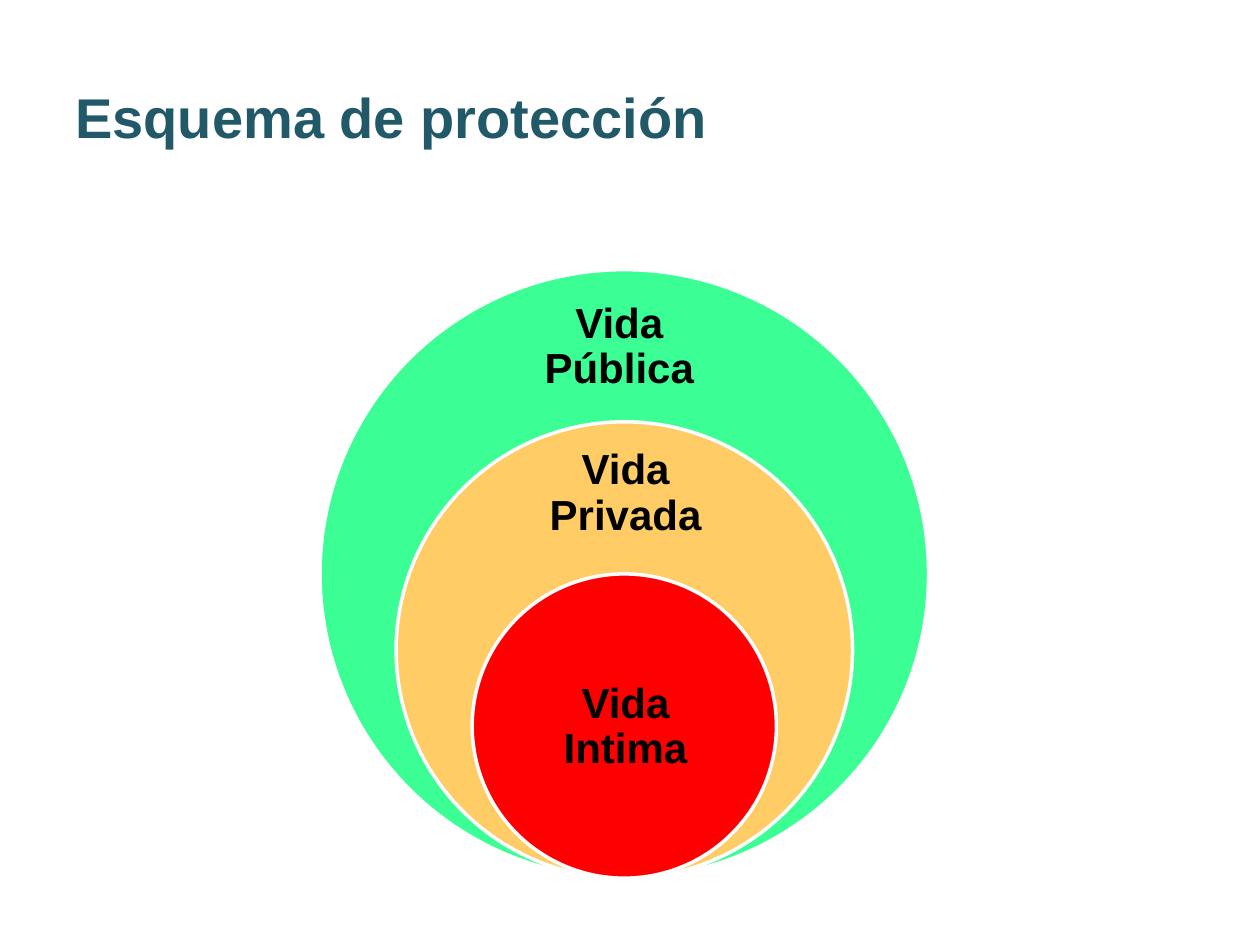
from dataclasses import dataclass

from pptx import Presentation
from pptx.dml.color import RGBColor as Rgb
from pptx.enum.shapes import MSO_SHAPE as Shape
from pptx.enum.text import MSO_ANCHOR as Anchor, PP_ALIGN as Align
from pptx.util import Inches, Pt


@dataclass(frozen=True)
class Theme:
    font: str = "Arial"
    title: str = "215968"
    ink: str = "000000"
    edge: str = "FFFFFF"
    public: str = "3BFF94"
    private: str = "FFCC66"
    inner: str = "FF0000"
    head: int = 32
    body: int = 24


THEME = Theme()

# label, fill, diameter share, label box (left, top, width, height) in the diagram
RINGS = [
    ("Vida Pública", THEME.public, 1, (1.53, 0.25, 1.69, 0.73)),
    ("Vida Privada", THEME.private, 0.75, (1.58, 1.44, 1.69, 0.68)),
    ("Vida Intima", THEME.inner, 0.5, (1.57, 3.03, 1.71, 1.21)),
]


def add_text(slide, box, text, size, color, inset):
    """Add a bold, vertically centred text box and return its paragraph."""
    frame = slide.shapes.add_textbox(*map(Inches, box)).text_frame
    frame.word_wrap = True
    frame.vertical_anchor = Anchor.MIDDLE
    frame.margin_left = frame.margin_right = Inches(inset)
    frame.margin_top = frame.margin_bottom = Inches(inset)
    frame.text = text
    para = frame.paragraphs[0]
    font = para.runs[0].font
    font.name, font.size, font.bold = THEME.font, Pt(size), True
    font.color.rgb = Rgb.from_string(color)
    return para


def add_title(slide, box):
    add_text(slide, box, "Esquema de protección", THEME.head, THEME.title, 0.1)


def add_circle(slide, box, fill):
    circle = slide.shapes.add_shape(Shape.OVAL, *map(Inches, box))
    circle.shadow.inherit = False
    circle.fill.solid()
    circle.fill.fore_color.rgb = Rgb.from_string(fill)
    circle.line.color.rgb = Rgb.from_string(THEME.edge)
    circle.line.width = Pt(2)


def add_rings(slide, box):
    """Nest the circles so that all of them touch the bottom of the box."""
    left, top, width, height = box
    for label, fill, share, (x, y, w, h) in RINGS:
        size = width * share
        add_circle(slide, (left + (width - size) / 2, top + height - size,
                           size, size), fill)
        para = add_text(slide, (left + x, top + y, w, h), label,
                        THEME.body, THEME.ink, 0.19)
        para.alignment = Align.CENTER
        para.line_spacing = 0.9
        para.space_after = Pt(8.4)


def main():
    deck = Presentation()
    deck.slide_width, deck.slide_height = Inches(10), Inches(7.5)
    slide = deck.slides.add_slide(deck.slide_layouts[6])
    add_title(slide, (0.5, 0.3, 9, 1.25))
    add_rings(slide, (2.54, 2.14, 4.83, 4.83))
    deck.save("out.pptx")


if __name__ == "__main__":
    main()
